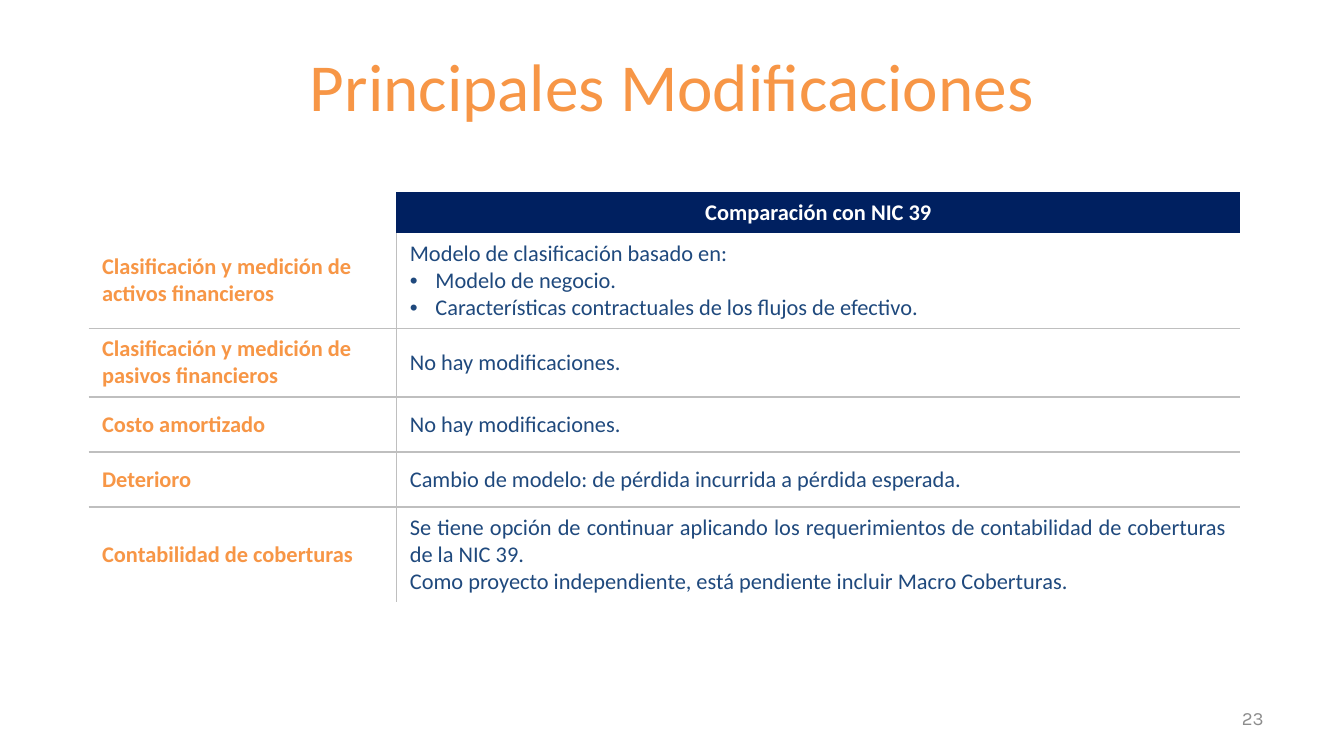
from lxml.etree import SubElement
from pptx import Presentation
from pptx.dml.color import RGBColor
from pptx.enum.text import MSO_ANCHOR as Anchor, MSO_AUTO_SIZE as AutoSize, PP_ALIGN as Align
from pptx.oxml.ns import qn
from pptx.util import Inches, Pt

ORANGE = RGBColor(0xF7, 0x96, 0x46)
NAVY = RGBColor(0x00, 0x20, 0x60)
BLUE = RGBColor(0x1F, 0x49, 0x7D)
WHITE = RGBColor(0xFF, 0xFF, 0xFF)
GRAY = RGBColor(0x8C, 0x8C, 0x8C)
RULE = RGBColor(0xBF, 0xBF, 0xBF)

SLIDE_WIDTH = 10
SLIDE_HEIGHT = SLIDE_WIDTH * 9 / 16

HEADER = "Comparación con NIC 39"
BULLET = "• "  # marks list items in the table content
TOPICS = [
    ("Clasificación y medición de activos financieros",
     ["Modelo de clasificación basado en:",
      BULLET + "Modelo de negocio.",
      BULLET + "Características contractuales de los flujos de efectivo."]),
    ("Clasificación y medición de pasivos financieros", ["No hay modificaciones."]),
    ("Costo amortizado", ["No hay modificaciones."]),
    ("Deterioro", ["Cambio de modelo: de pérdida incurrida a pérdida esperada."]),
    ("Contabilidad de coberturas",
     ["Se tiene opción de continuar aplicando los requerimientos de contabilidad "
      "de coberturas de la NIC 39.",
      "Como proyecto independiente, está pendiente incluir Macro Coberturas."]),
]
COLUMN_WIDTHS = [2.29, 6.28]
ROW_HEIGHTS = [0.3, 0.71, 0.51, 0.41, 0.41, 0.71]


class SlideBuilder:
    font_name = "Calibri"
    table_size = 12

    def __init__(self, slide):
        self.slide = slide

    def place(self, shape, left, top, width, height):
        shape.left, shape.top = Inches(left), Inches(top)
        shape.width, shape.height = Inches(width), Inches(height)

    def style(self, paragraph, size, color, align, bold=False, name=None):
        paragraph.alignment = align
        font = paragraph.font
        font.name, font.size, font.bold = name or self.font_name, Pt(size), bold
        font.color.rgb = color

    def title(self, text, *box):
        shape = self.slide.shapes.title
        self.place(shape, *box)
        frame = shape.text_frame
        frame.text = text
        frame.auto_size = AutoSize.NONE
        frame.vertical_anchor = Anchor.MIDDLE
        self.style(frame.paragraphs[0], 36, ORANGE, Align.CENTER)

    def page_number(self, text, *box):
        shape = self.slide.shapes.add_textbox(*map(Inches, box))
        frame = shape.text_frame
        frame.word_wrap = True
        frame.text = text
        self.style(frame.paragraphs[0], 10, GRAY, Align.RIGHT, name="Karla")

    def table(self, left, top, widths, heights):
        frame = self.slide.shapes.add_table(
            len(heights), len(widths), Inches(left), Inches(top),
            Inches(sum(widths)), Inches(sum(heights)))
        table = frame.table
        table.first_row = table.horz_banding = False
        for column, width in zip(table.columns, widths):
            column.width = Inches(width)
        for row, height in zip(table.rows, heights):
            row.height = Inches(height)
        return table

    def cell(self, cell, lines, color, align, bold=False, fill=None, sides=""):
        cell.vertical_anchor = Anchor.MIDDLE
        self.borders(cell, sides)
        if fill is None:
            cell.fill.background()
        else:
            cell.fill.solid()
            cell.fill.fore_color.rgb = fill
        cell.text_frame.text = "\n".join(line.removeprefix(BULLET) for line in lines)
        for paragraph, line in zip(cell.text_frame.paragraphs, lines):
            if line.startswith(BULLET):
                self.bullet(paragraph)
            self.style(paragraph, self.table_size, color, align, bold)
            if not line:  # an empty cell keeps the table's text size
                SubElement(paragraph._p, qn("a:endParaRPr"), sz=str(self.table_size * 100))

    def bullet(self, paragraph):
        properties = paragraph._p.get_or_add_pPr()
        indent = Inches(0.19)
        properties.set("marL", str(indent))
        properties.set("indent", str(-indent))
        SubElement(properties, qn("a:buFont"), typeface="Arial")
        SubElement(properties, qn("a:buChar"), char=BULLET.strip())

    def borders(self, cell, sides):
        properties = cell._tc.get_or_add_tcPr()
        for side in "LRTB":
            line = SubElement(properties, qn("a:ln" + side), w=str(Pt(1)))
            if side in sides:
                fill = SubElement(line, qn("a:solidFill"))
                SubElement(fill, qn("a:srgbClr"), val=str(RULE))
            else:
                SubElement(line, qn("a:noFill"))


def main():
    presentation = Presentation()
    presentation.slide_width = Inches(SLIDE_WIDTH)
    presentation.slide_height = Inches(SLIDE_HEIGHT)
    title_only = presentation.slide_layouts[5]
    builder = SlideBuilder(presentation.slides.add_slide(title_only))

    builder.title("Principales Modificaciones", 0.5, 0.3, 9, 0.66)

    # Comparison table: header row, then one row per topic
    table = builder.table(0.66, 1.43, COLUMN_WIDTHS, ROW_HEIGHTS)
    builder.cell(table.cell(0, 0), [""], WHITE, Align.LEFT)
    builder.cell(table.cell(0, 1), [HEADER], WHITE, Align.CENTER, bold=True, fill=NAVY)
    for row, (topic, changes) in enumerate(TOPICS, start=1):
        rules = ("T" if row > 1 else "") + ("B" if row < len(TOPICS) else "")
        builder.cell(table.cell(row, 0), [topic], ORANGE, Align.LEFT,
                     bold=True, sides="R" + rules)
        builder.cell(table.cell(row, 1), changes, BLUE, Align.JUSTIFY, sides="L" + rules)

    builder.page_number("23", 7.17, 5.21, 2.33, 0.3)
    presentation.save("out.pptx")


if __name__ == "__main__":
    main()
